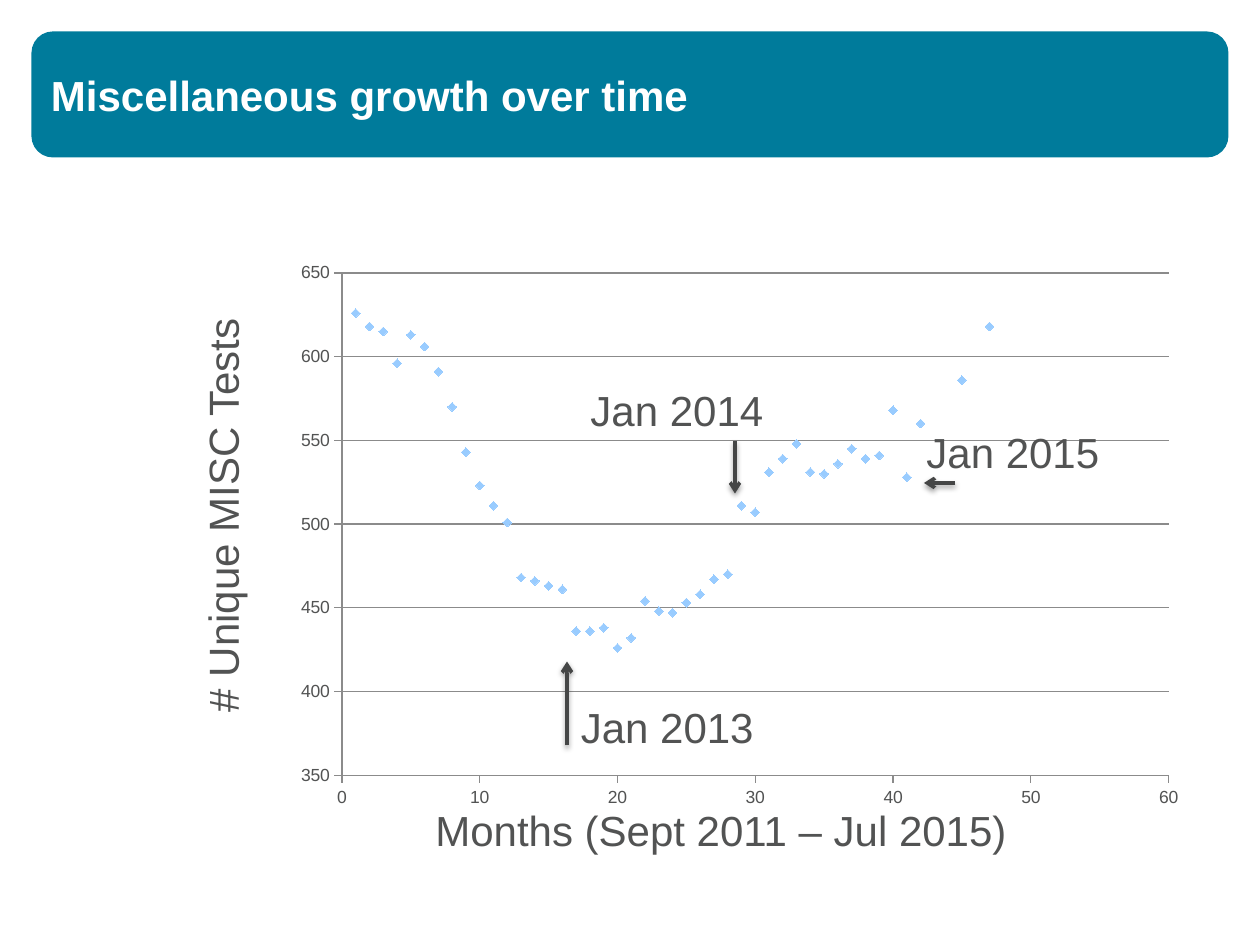
from lxml import etree
from pptx import Presentation
from pptx.chart.data import XyChartData
from pptx.dml.color import RGBColor
from pptx.enum.chart import XL_CHART_TYPE, XL_MARKER_STYLE, XL_TICK_MARK
from pptx.enum.shapes import MSO_CONNECTOR, MSO_SHAPE
from pptx.enum.text import MSO_ANCHOR, PP_ALIGN
from pptx.oxml import parse_xml
from pptx.oxml.ns import qn
from pptx.util import Pt

SCATTER = XL_CHART_TYPE.XY_SCATTER
DIAMOND = XL_MARKER_STYLE.DIAMOND
OUT, NONE = XL_TICK_MARK.OUTSIDE, XL_TICK_MARK.NONE
STRAIGHT = MSO_CONNECTOR.STRAIGHT
ROUNDED = MSO_SHAPE.ROUNDED_RECTANGLE
TOP = MSO_ANCHOR.TOP
LEFT, CENTER = PP_ALIGN.LEFT, PP_ALIGN.CENTER

TEAL = RGBColor(0x00, 0x7B, 0x9B)
WHITE = RGBColor(0xFF, 0xFF, 0xFF)
GREY = RGBColor(0x52, 0x53, 0x53)
DARK = RGBColor(0x45, 0x46, 0x46)
RULE = RGBColor(0x8B, 0x8B, 0x8B)
SKY = RGBColor(0x99, 0xCC, 0xFF)
FONT = "Arial"

# Content: one test count per month, None where there is no count
TITLE = "Miscellaneous growth over time"
TESTS = [
    626, 618, 615, 596, 613, 606, 591, 570, 543, 523, 511, 501,
    468, 466, 463, 461, 436, 436, 438, 426, 432, 454, 448, 447,
    453, 458, 467, 470, 511, 507, 531, 539, 548, 531, 530, 536,
    545, 539, 541, 568, 528, 560, None, None, 586, None, 618,
]
# Text, left, top, width, height, rotation
LABELS = [
    ("# Unique MISC Tests", 6, 276.5, 242, 36, 270),
    ("Months (Sept 2011 – Jul 2015)", 240, 456, 344, 36, 0),
    ("Jan 2013", 324, 397.5, 114.5, 36, 0),
    ("Jan 2014", 329.5, 216, 114.5, 36, 0),
    ("Jan 2015", 521.5, 240, 114.5, 36, 0),
]
# Start x, start y, end x, end y
ARROWS = [
    (324, 426, 324, 378),
    (420, 252, 420, 282),
    (546, 276, 528, 276),
]
# Share of the chart frame taken by the plot
PLOT = {"x": 0.064, "y": 0.037, "w": 0.905, "h": 0.886}

SHADOW = (
    '<a:effectLst xmlns:a="http://schemas.openxmlformats.org/drawingml/2006/main">'
    '<a:outerShdw blurRad="39370" dist="20320" dir="5400000" rotWithShape="0">'
    '<a:srgbClr val="000000"><a:alpha val="38000"/></a:srgbClr>'
    '</a:outerShdw></a:effectLst>'
)

deck = Presentation()
deck.slide_width, deck.slide_height = Pt(720), Pt(540)
slide = deck.slides.add_slide(deck.slide_layouts[6])
shapes = slide.shapes


def add_text(text, x, y, w, h, turn=0, color=GREY, bold=False, wrap=False,
             align=CENTER):
    box = shapes.add_textbox(Pt(x), Pt(y), Pt(w), Pt(h))
    box.rotation = turn
    frame = box.text_frame
    frame.word_wrap = wrap
    frame.vertical_anchor = TOP
    para = frame.paragraphs[0]
    para.alignment = align
    run = para.add_run()
    run.text = text
    font = run.font
    font.name, font.size, font.bold = FONT, Pt(24), bold
    font.color.rgb = color


def add_arrow(*ends):
    line = shapes.add_connector(STRAIGHT, *map(Pt, ends))
    line.line.width = Pt(2)
    line.line.color.rgb = DARK
    tail = etree.SubElement(line.line._get_or_add_ln(), qn("a:tailEnd"))
    tail.set("type", "arrow")
    line._element.spPr.append(parse_xml(SHADOW))


def style_axis(axis, low, high, step):
    axis.minimum_scale, axis.maximum_scale = low, high
    axis.major_unit = step
    axis.major_tick_mark, axis.minor_tick_mark = OUT, NONE
    axis.format.line.color.rgb = RULE
    axis.format.line.width = Pt(0.75)


# Title banner
banner = shapes.add_shape(ROUNDED, Pt(18), Pt(18), Pt(684), Pt(72))
banner.adjustments[0] = 0.17
banner.shadow.inherit = False
banner.fill.solid()
banner.fill.fore_color.rgb = TEAL
banner.line.fill.background()
add_text(TITLE, 22, 36, 666, 96, color=WHITE, bold=True, wrap=True, align=LEFT)

# Scatter chart
data = XyChartData()
tests = data.add_series("Series 1")
for month, count in enumerate(TESTS, 1):
    if count is not None:
        tests.add_data_point(month, count)
chart = shapes.add_chart(SCATTER, Pt(162), Pt(144), Pt(522), Pt(324), data).chart
chart.has_legend = chart.has_title = False
chart.font.name, chart.font.size = FONT, Pt(10)
chart.font.color.rgb = GREY

style_axis(chart.category_axis, 0, 60, 10)
style_axis(chart.value_axis, 350, 650, 50)
chart.category_axis.has_major_gridlines = False
chart.value_axis.has_major_gridlines = True
grid = chart.value_axis.major_gridlines.format.line
grid.color.rgb, grid.width = RULE, Pt(0.75)

plot = chart.plots[0]
plot.vary_by_categories = False
series = plot.series[0]
series.smooth = False
series.format.line.fill.background()
series.marker.style, series.marker.size = DIAMOND, 5
series.marker.format.fill.solid()
series.marker.format.fill.fore_color.rgb = SKY
series.marker.format.line.color.rgb = SKY

# Fixed plot area
area = chart._chartSpace.chart.plotArea
for old in area.findall(qn("c:layout")):
    area.remove(old)
layout = etree.Element(qn("c:layout"))
area.insert(0, layout)
manual = etree.SubElement(layout, qn("c:manualLayout"))
rules = {"layoutTarget": "inner", "xMode": "edge", "yMode": "edge", **PLOT}
for name, value in rules.items():
    etree.SubElement(manual, qn("c:" + name)).set("val", str(value))

# Axis captions, month labels and their arrows
for label in LABELS:
    add_text(*label)
for arrow in ARROWS:
    add_arrow(*arrow)

deck.save("out.pptx")
